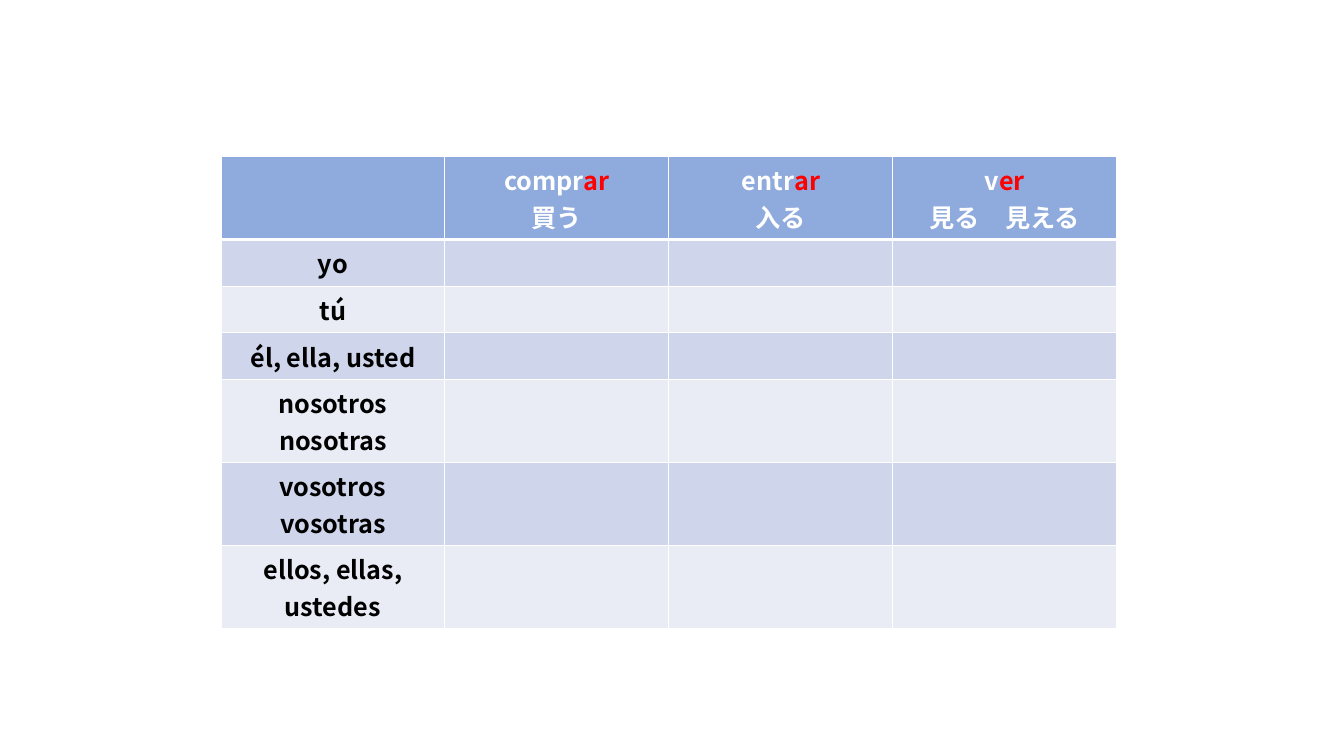
from dataclasses import dataclass

from lxml import etree
from pptx import Presentation
from pptx import util as u
from pptx.dml.color import RGBColor
from pptx.enum import text
from pptx.oxml import ns

WHITE = RGBColor(0xFF, 0xFF, 0xFF)
BLACK = RGBColor(0x00, 0x00, 0x00)
RED = RGBColor(0xFF, 0x00, 0x00)
HEADER_BLUE = RGBColor(0x8F, 0xAA, 0xDC)
BANDS = (RGBColor(0xCF, 0xD5, 0xEA), RGBColor(0xE9, 0xEB, 0xF5))

FONT = "Noto Sans CJK JP"
FONT_FORMAT = {"name": FONT, "size": u.Pt(18), "bold": True}
LEFT, TOP, COLUMN_WIDTH = u.Pt(157.8), u.Pt(111.8), u.Pt(160)
ONE_LINE, TWO_LINES = u.Pt(33.1), u.Pt(59.3)
THIN, THICK = u.Pt(1), u.Pt(3)


@dataclass(frozen=True)
class Verb:
    stem: str
    ending: str
    meaning: str


@dataclass(frozen=True)
class Person:
    pronouns: tuple[str, ...]
    height: u.Length


VERBS = (
    Verb("compr", "ar", "買う"),
    Verb("entr", "ar", "入る"),
    Verb("v", "er", "見る　見える"),
)
PERSONS = (
    Person(("yo",), ONE_LINE),
    Person(("tú",), ONE_LINE),
    Person(("él, ella, usted",), ONE_LINE),
    Person(("nosotros", "nosotras"), TWO_LINES),
    Person(("vosotros", "vosotras"), TWO_LINES),
    Person(("ellos, ellas, ustedes",), TWO_LINES),
)


def write_lines(cell, lines: list[list[tuple[str, RGBColor]]]) -> None:
    """Write centred paragraphs made of coloured pieces."""
    for index, pieces in enumerate(lines):
        frame = cell.text_frame
        paragraph = frame.add_paragraph() if index else frame.paragraphs[0]
        paragraph.alignment = text.PP_ALIGN.CENTER
        for wording, colour in pieces:
            run = paragraph.add_run()
            run.text = wording
            run.font.color.rgb = colour
            for attribute, value in FONT_FORMAT.items():
                setattr(run.font, attribute, value)
            properties = run._r.get_or_add_rPr()
            etree.SubElement(properties, ns.qn("a:ea"), typeface=FONT)


def style_cell(cell, fill: RGBColor, top: u.Length, bottom: u.Length) -> None:
    """Draw white borders, then fill the cell."""
    properties = cell._tc.get_or_add_tcPr()
    for side, width in {"L": THIN, "R": THIN, "T": top, "B": bottom}.items():
        border = etree.SubElement(properties, ns.qn(f"a:ln{side}"), w=str(width))
        solid = etree.SubElement(border, ns.qn("a:solidFill"))
        etree.SubElement(solid, ns.qn("a:srgbClr"), val=str(WHITE))
    cell.fill.solid()
    cell.fill.fore_color.rgb = fill


def build_conjugation_table(slide) -> None:
    heights = [TWO_LINES, *(person.height for person in PERSONS)]
    column_count = len(VERBS) + 1
    conjugation = slide.shapes.add_table(
        len(heights), column_count, LEFT, TOP, COLUMN_WIDTH * column_count, sum(heights)
    ).table
    for column in conjugation.columns:
        column.width = COLUMN_WIDTH

    # Row heights, bands and borders
    for index, (row, height) in enumerate(zip(conjugation.rows, heights)):
        row.height = height
        fill = BANDS[(index - 1) % 2] if index else HEADER_BLUE
        for cell in row.cells:
            style_cell(cell, fill, THICK if index == 1 else THIN, THIN if index else THICK)

    # Verbs across the top
    for column, verb in enumerate(VERBS, start=1):
        infinitive = [(verb.stem, WHITE), (verb.ending, RED)]
        write_lines(conjugation.cell(0, column), [infinitive, [(verb.meaning, WHITE)]])

    # Pronouns down the side
    for row, person in enumerate(PERSONS, start=1):
        write_lines(conjugation.cell(row, 0), [[(word, BLACK)] for word in person.pronouns])


def main() -> None:
    deck = Presentation()
    deck.slide_width, deck.slide_height = u.Pt(960), u.Pt(540)
    build_conjugation_table(deck.slides.add_slide(deck.slide_layouts[6]))
    deck.save("out.pptx")


if __name__ == "__main__":
    main()
